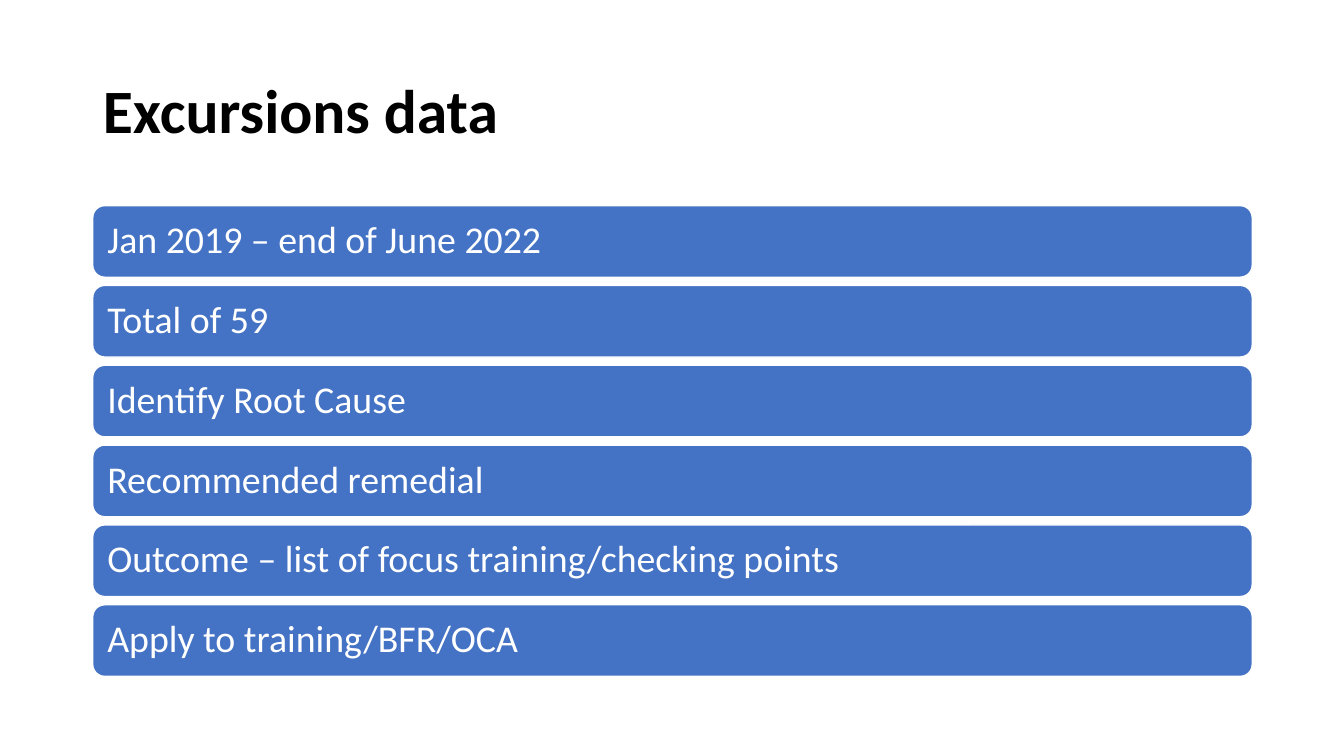
from pptx import Presentation
from pptx.dml.color import RGBColor
from pptx.enum.shapes import MSO_SHAPE as Shape
from pptx.enum.text import MSO_ANCHOR as Anchor, PP_ALIGN as Align
from pptx.util import Inches, Pt

COLOURS = {"title": "000000", "bar": "4472C4", "light": "FFFFFF"}
TITLE_FONT = {"name": "Calibri", "size": Pt(44), "bold": True}
BAR_FONT = {"name": "Calibri", "size": Pt(27), "bold": False}
BAR_FRAME = {
    f"margin_{side}": Inches(0.11) for side in ("left", "right", "top", "bottom")
}
BAR_HEIGHT = 0.71
STEPS = [
    "Jan 2019 – end of June 2022",
    "Total of 59",
    "Identify Root Cause",
    "Recommended remedial",
    "Outcome – list of focus training/checking points",
    "Apply to training/BFR/OCA",
]


def apply_format(target, values):
    """Set each named attribute on the target."""
    for name, value in values.items():
        setattr(target, name, value)


def write_text(shape, text, font, colour):
    """Write one left-aligned line, centred vertically in its shape."""
    frame = shape.text_frame
    apply_format(frame, {"word_wrap": True, "vertical_anchor": Anchor.MIDDLE})
    para = frame.paragraphs[0]
    apply_format(para, {"alignment": Align.LEFT, "line_spacing": 0.9})
    span = para.add_run()
    span.text = text
    apply_format(span.font, font)
    span.font.color.rgb = RGBColor.from_string(COLOURS[colour])


def place_title(page, text, left, top, width, height):
    """Move the title placeholder into the box and fill it."""
    title = page.shapes.title
    box = {"left": left, "top": top, "width": width, "height": height}
    apply_format(title, {side: Inches(length) for side, length in box.items()})
    write_text(title, text, TITLE_FONT, "title")


def add_bars(page, steps, left, top, width, height):
    """Stack one rounded bar per step, evenly spread over the box."""
    pitch = (height - BAR_HEIGHT) / (len(steps) - 1)
    for index, step in enumerate(steps):
        bar = page.shapes.add_shape(
            Shape.ROUNDED_RECTANGLE,
            Inches(left),
            Inches(top + index * pitch),
            Inches(width),
            Inches(BAR_HEIGHT),
        )
        bar.shadow.inherit = False
        bar.fill.solid()
        bar.fill.fore_color.rgb = RGBColor.from_string(COLOURS["bar"])
        bar.line.color.rgb = RGBColor.from_string(COLOURS["light"])
        bar.line.width = Pt(1)
        apply_format(bar.text_frame, BAR_FRAME)
        write_text(bar, step, BAR_FONT, "light")


def main():
    """Build the slide and save the deck."""
    deck = Presentation()
    apply_format(deck, {"slide_width": Inches(13.33), "slide_height": Inches(7.5)})
    page = deck.slides.add_slide(deck.slide_layouts.get_by_name("Title Only"))
    place_title(page, "Excursions data", 0.92, 0.4, 11.5, 1.45)
    add_bars(page, STEPS, 0.92, 2.04, 11.5, 4.67)
    deck.save("out.pptx")


if __name__ == "__main__":
    main()
